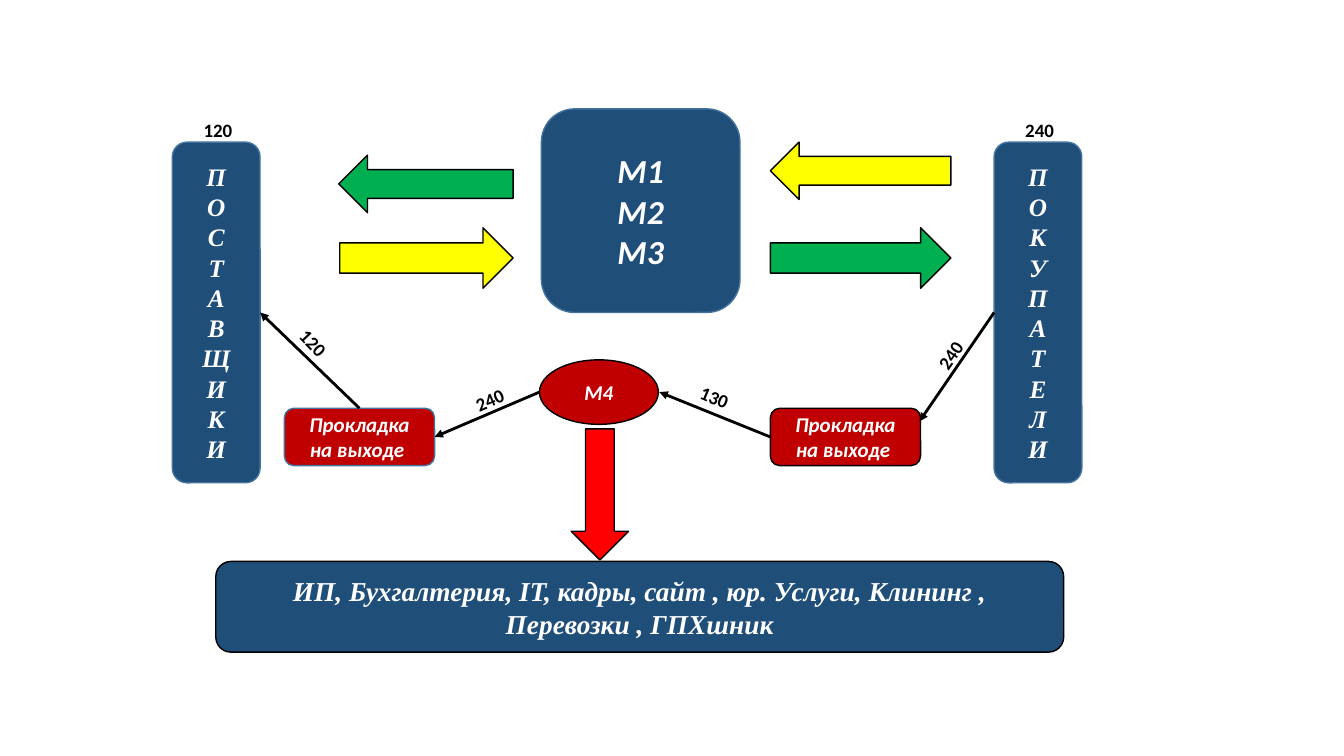
from lxml.etree import SubElement
from pptx import Presentation
from pptx.dml.color import RGBColor
from pptx.enum.shapes import MSO_CONNECTOR, MSO_SHAPE
from pptx.enum.text import MSO_ANCHOR, MSO_AUTO_SIZE, PP_ALIGN
from pptx.oxml.ns import qn
from pptx.util import Inches, Pt

NAVY = RGBColor(0x1F, 0x4E, 0x79)
STEEL = RGBColor(0x43, 0x73, 0x9E)
CRIMSON = RGBColor(0xC0, 0x00, 0x00)
RED = RGBColor(0xFF, 0x00, 0x00)
GREEN = RGBColor(0x00, 0xB0, 0x50)
YELLOW = RGBColor(0xFF, 0xFF, 0x00)
BLACK = RGBColor(0x00, 0x00, 0x00)
WHITE = RGBColor(0xFF, 0xFF, 0xFF)

SANS, SERIF = "Calibri", "Times New Roman"
TOP, LEFT, BOTTOM, RIGHT = range(4)


class FlowSlide:
    """Draws the blocks, arrows and amounts of the flow diagram."""

    def __init__(self, slide):
        self.shapes = slide.shapes

    def add_text(self, frame, paragraphs, size, font, color, italic, align):
        """Fill the frame; a newline in a paragraph is a line break."""
        for index, text in enumerate(paragraphs):
            paragraph = frame.paragraphs[0] if index == 0 else frame.add_paragraph()
            paragraph.alignment = align
            for number, line in enumerate(text.split("\n")):
                if number:
                    paragraph.add_line_break()
                run = paragraph.add_run()
                run.text = line
                run.font.size = Pt(size)
                run.font.name = font
                run.font.bold = True
                run.font.italic = italic
                run.font.color.rgb = color

    def figure(self, kind, box, fill, outline=BLACK, rotation=0):
        shape = self.shapes.add_shape(kind, *map(Inches, box))
        shape.shadow.inherit = False
        shape.fill.solid()
        shape.fill.fore_color.rgb = fill
        shape.line.color.rgb = outline
        shape.line.width = Pt(1)
        shape.rotation = rotation
        return shape

    def block(self, box, paragraphs, size, font=SANS, fill=NAVY, outline=STEEL,
              kind=MSO_SHAPE.ROUNDED_RECTANGLE):
        shape = self.figure(kind, box, fill, outline)
        shape.text_frame.word_wrap = True
        shape.text_frame.vertical_anchor = MSO_ANCHOR.MIDDLE
        self.add_text(shape.text_frame, paragraphs, size, font, WHITE, True, PP_ALIGN.CENTER)
        return shape

    def amount(self, left, top, text, rotation=0):
        label = self.shapes.add_textbox(*map(Inches, (left, top, 0.65, 0.33)))
        label.rotation = rotation
        label.text_frame.word_wrap = True
        label.text_frame.auto_size = MSO_AUTO_SIZE.SHAPE_TO_FIT_TEXT
        self.add_text(label.text_frame, [text], 13.5, SANS, BLACK, False, PP_ALIGN.LEFT)

    def payment(self, start, end, source=None, target=None):
        """Arrow from start to end; source and target are (block, side)."""
        arrow = self.shapes.add_connector(
            MSO_CONNECTOR.STRAIGHT, *map(Inches, (*start, *end)))
        if source:
            arrow.begin_connect(*source)
        if target:
            arrow.end_connect(*target)
        arrow.line.color.rgb = BLACK
        arrow.line.width = Pt(2)
        properties = arrow._element.spPr
        SubElement(properties.get_or_add_ln(), qn("a:tailEnd"), type="triangle")
        SubElement(properties, qn("a:effectLst"))


def main():
    deck = Presentation()
    deck.slide_width, deck.slide_height = Inches(13.33), Inches(7.5)
    flow = FlowSlide(deck.slides.add_slide(deck.slide_layouts[6]))

    # Companies, suppliers and buyers
    flow.block((5.37, 1.08, 1.97, 2.02), ["М1", "М2", "М3"], 24)
    suppliers = flow.block((1.71, 1.41, 0.87, 3.38),
                           ["П", "О\nС", *"ТАВЩИКИ"], 18, SERIF)
    buyers = flow.block((9.86, 1.41, 0.87, 3.38),
                        ["П", "\n".join("ОКУПАТЕЛИ")], 18, SERIF)

    # Exchange of goods and money
    for kind, box, fill in (
        (MSO_SHAPE.LEFT_ARROW, (3.36, 1.54, 1.73, 0.57), GREEN),
        (MSO_SHAPE.RIGHT_ARROW, (3.37, 2.26, 1.72, 0.6), YELLOW),
        (MSO_SHAPE.LEFT_ARROW, (7.64, 1.41, 1.79, 0.57), YELLOW),
        (MSO_SHAPE.RIGHT_ARROW, (7.64, 2.26, 1.79, 0.6), GREEN),
    ):
        flow.figure(kind, box, fill)

    # Intermediaries around M4
    flow.block((5.35, 3.57, 1.18, 0.64), ["М4"], 15, fill=CRIMSON,
               outline=BLACK, kind=MSO_SHAPE.OVAL)
    supplier_link, buyer_link = (
        flow.block((left, 4.05, 1.49, 0.57), ["Прокладка на выходе "], 15,
                   fill=CRIMSON, outline=outline)
        for left, outline in ((2.82, STEEL), (7.64, BLACK))
    )

    # Payment chain from buyers to suppliers
    flow.payment((9.86, 3.1), (9.12, 4.18), source=(buyers, LEFT))
    flow.payment((7.64, 4.34), (6.54, 3.89), source=(buyer_link, LEFT))
    flow.payment((5.35, 3.89), (4.31, 4.34), target=(supplier_link, RIGHT))
    flow.payment((3.57, 4.05), (2.58, 3.1), (supplier_link, TOP), (suppliers, RIGHT))

    # Amounts
    for left, top, text, rotation in (
        (1.92, 1.13, "120", 0),
        (10.07, 1.13, "240", 0),
        (9.15, 3.29, "240", 304.3),
        (6.84, 3.81, "130", 22.6),
        (4.61, 3.77, "240", 336.8),
        (2.84, 3.3, "120", 46.4),
    ):
        flow.amount(left, top, text, rotation)

    # Expenses paid by M4
    flow.figure(MSO_SHAPE.LEFT_ARROW, (5.3, 4.62, 1.3, 0.57), RED, rotation=270)
    flow.block((2.14, 5.57, 8.41, 0.9),
               ["ИП, Бухгалтерия, IT, кадры, сайт , юр. Услуги, Клининг , "
                "Перевозки , ГПХшник"], 19.5, SERIF, outline=BLACK)

    deck.save("out.pptx")


if __name__ == "__main__":
    main()
